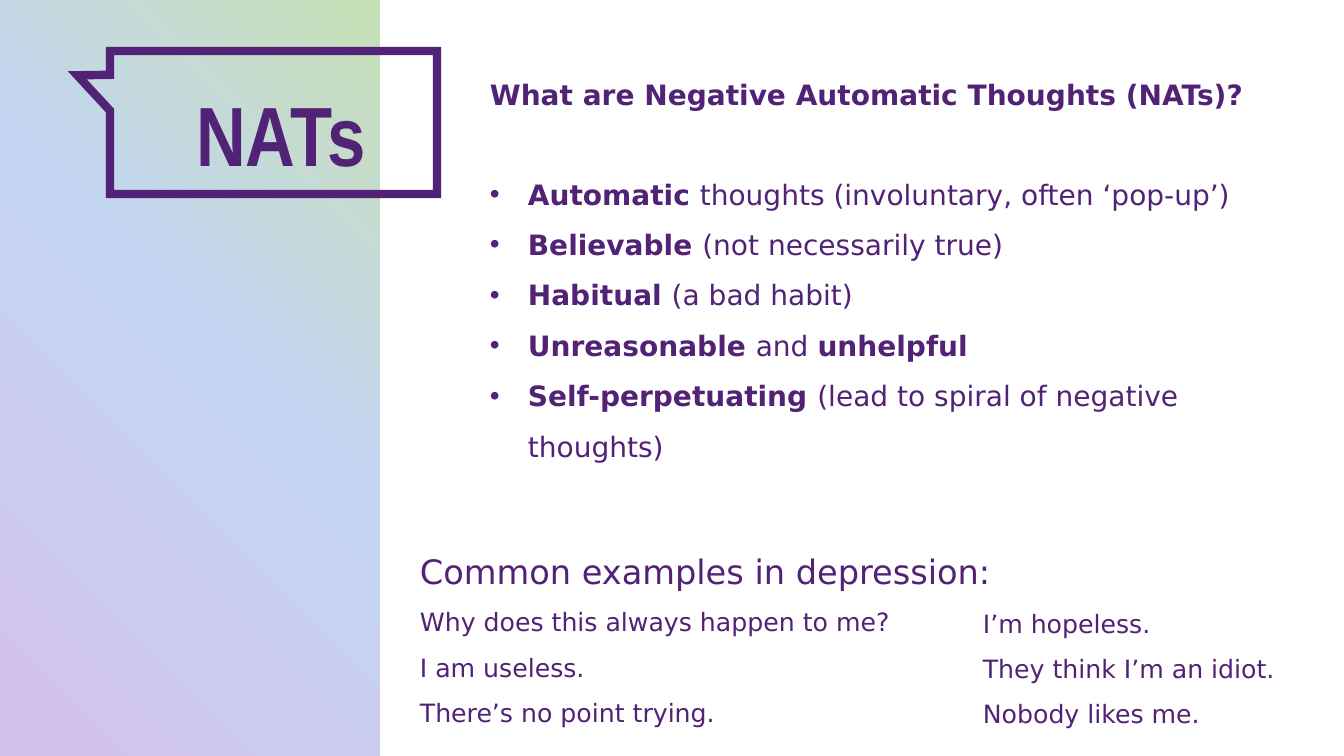
import pptx
import pptx.dml.color
import pptx.enum.shapes
import pptx.enum.text
import pptx.oxml
import pptx.oxml.ns
import pptx.util

RGBColor = pptx.dml.color.RGBColor
PURPLE = RGBColor(0x51, 0x22, 0x75)
LILAC = RGBColor(0xD3, 0xC1, 0xED)
SKY = RGBColor(0xC4, 0xD5, 0xF3)
GREEN = RGBColor(0xC5, 0xE0, 0xB4)
NAMESPACE = pptx.oxml.ns.nsdecls("a")
BODY_FONT = "DejaVu Sans"

# Content: a paragraph is a list of (text, bold) spans
TITLE = [("NATs", True)]
HEADING = [("What are Negative Automatic Thoughts (NATs)?", True)]
TRAITS = [
    [("Automatic ", True), ("thoughts (involuntary, often ‘pop-up’)", False)],
    [("Believable ", True), ("(not necessarily true)", False)],
    [("Habitual ", True), ("(a bad habit)", False)],
    [("Unreasonable ", True), ("and ", False), ("unhelpful", True)],
    [("Self-perpetuating ", True), ("(lead to spiral of negative thoughts)", False)],
]
EXAMPLES_HEADING = [("Common examples in depression:", False)]
EXAMPLES_LEFT = ["Why does this always happen to me?", "I am useless.", "There’s no point trying."]
EXAMPLES_RIGHT = ["I’m hopeless.", "They think I’m an idiot.", "Nobody likes me."]
GRADIENT = [(0, LILAC), (56, SKY), (100, GREEN)]

# Places in px: left, top, width, height
PAGE_SIZE = (1344, 756)
PANEL = (0, 0, 380, 756)
CALLOUT = (110, 51, 327, 143)
TITLE_BOX = (167, 57, 218, 121)
TRAITS_BOX = (480, 56, 799, 519)
EXAMPLES_BOX = (410, 526, 672, 209)
RIGHT_BOX = (973, 588, 349, 147)
BULLET_INDENT = 38
TITLE_INDENT = 19


def emu(px):
    return pptx.util.Emu(round(px * 914400 / 100.8))


def place(rect):
    return [emu(px) for px in rect]


def add_preset(page, kind, rect):
    shape = page.shapes.add_shape(kind, *place(rect))
    shape.shadow.inherit = False
    return shape


def write(frame, spans, size, font=BODY_FONT, spacing=1.5, first=False):
    para = frame.paragraphs[0] if first else frame.add_paragraph()
    para.alignment = pptx.enum.text.PP_ALIGN.LEFT
    para.line_spacing = spacing
    para.space_before = pptx.util.Pt(0)
    for text, bold in spans:
        span = para.add_run()
        span.text = text
        span.font.name = font
        span.font.size = pptx.util.Pt(size)
        span.font.bold = bold
        span.font.color.rgb = PURPLE
    return para


def add_bullet(para):
    properties = para._p.get_or_add_pPr()
    properties.set("marL", str(emu(BULLET_INDENT)))
    properties.set("indent", str(-emu(BULLET_INDENT)))
    for tag in ('buFont typeface="Arial"', 'buChar char="•"'):
        properties.append(pptx.oxml.parse_xml(f"<a:{tag} {NAMESPACE}/>"))


def add_box(page, rect):
    frame = page.shapes.add_textbox(*place(rect)).text_frame
    frame.word_wrap = True
    return frame


deck = pptx.Presentation()
deck.slide_width, deck.slide_height = place(PAGE_SIZE)
page = deck.slides.add_slide(deck.slide_layouts[5])

# Side panel, shaded outwards from its bottom left corner
panel = add_preset(page, pptx.enum.shapes.MSO_SHAPE.RECTANGLE, PANEL)
panel.line.fill.background()
stops = "".join(
    f'<a:gs pos="{percent * 1000}"><a:srgbClr val="{color}"/></a:gs>'
    for percent, color in GRADIENT
)
panel_properties = panel._element.spPr
panel_properties.find(pptx.oxml.ns.qn("a:prstGeom")).addnext(pptx.oxml.parse_xml(
    f'<a:gradFill {NAMESPACE} rotWithShape="1"><a:gsLst>{stops}</a:gsLst>'
    '<a:path path="circle"><a:fillToRect t="100000" r="100000"/></a:path></a:gradFill>'
))

# Speech callout around the title
callout = add_preset(page, pptx.enum.shapes.MSO_SHAPE.RECTANGULAR_CALLOUT, CALLOUT)
callout.adjustments[0] = -0.6
callout.adjustments[1] = -0.33
callout.fill.background()
callout.line.color.rgb = PURPLE
callout.line.width = pptx.util.Pt(6)
callout.line._get_or_add_ln().append(
    pptx.oxml.parse_xml(f'<a:miter {NAMESPACE} lim="800000"/>'))

# Title, brought in front of the panel
title = page.shapes.title
title.left, title.top, title.width, title.height = place(TITLE_BOX)
page.shapes._spTree.append(title._element)
title_frame = title.text_frame
title_frame.word_wrap = True
title_frame.auto_size = pptx.enum.text.MSO_AUTO_SIZE.NONE
title_frame.vertical_anchor = pptx.enum.text.MSO_ANCHOR.TOP
title_para = write(title_frame, TITLE, 60, "Arial Narrow", 1.2, first=True)
title_para._p.get_or_add_pPr().set("marL", str(emu(TITLE_INDENT)))

# Heading and traits
traits = add_box(page, TRAITS_BOX)
write(traits, HEADING, 20, first=True).space_after = pptx.util.Pt(35)
for spans in TRAITS:
    add_bullet(write(traits, spans, 20))

# Examples in two columns
left = add_box(page, EXAMPLES_BOX)
write(left, EXAMPLES_HEADING, 24, first=True)
for text in EXAMPLES_LEFT:
    write(left, [(text, False)], 18)
right = add_box(page, RIGHT_BOX)
for number, text in enumerate(EXAMPLES_RIGHT):
    write(right, [(text, False)], 18, first=number == 0)

deck.save("out.pptx")
